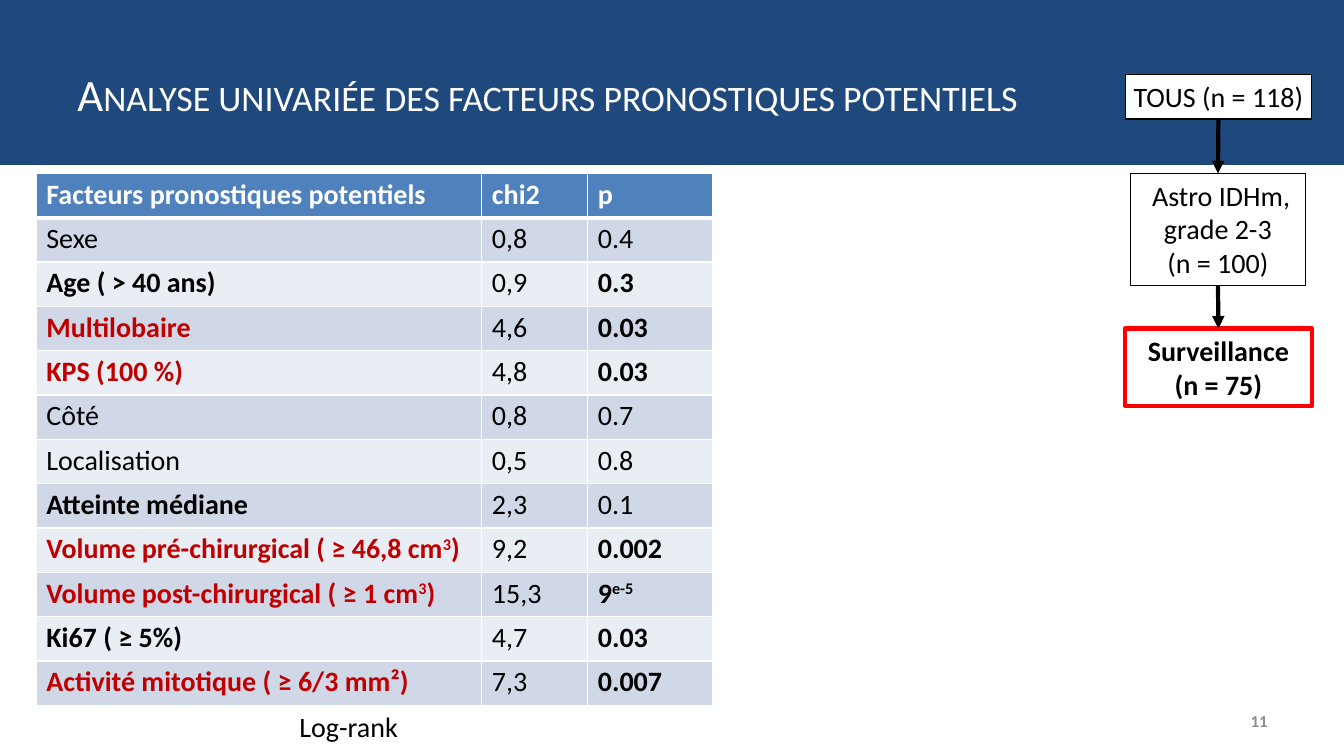
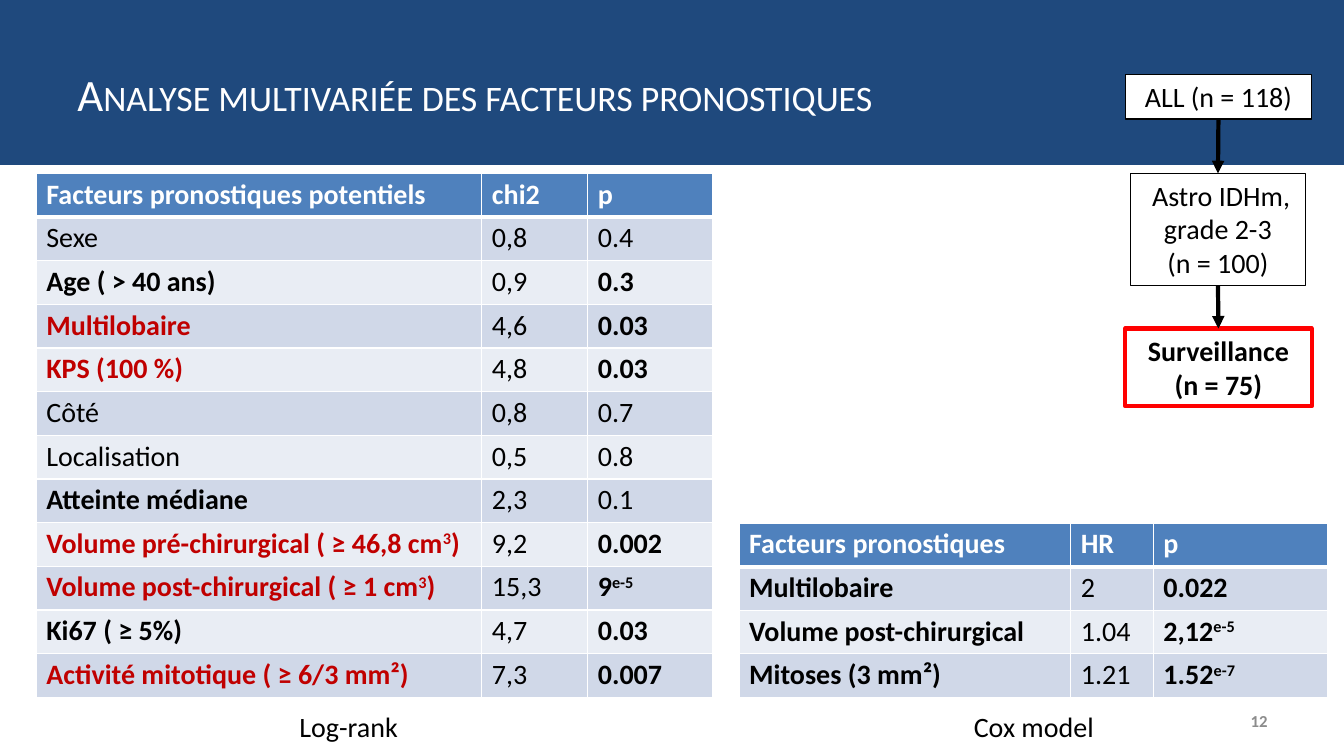
from pptx import Presentation
from pptx import util as u
from pptx.dml.color import RGBColor
from pptx.enum import shapes, text
from pptx.oxml.ns import qn
from lxml import etree

COLORS = {
    "navy": "1F497D", "header": "4F81BD", "band_dark": "D0D8E8", "band_light": "E9EDF4",
    "white": "FFFFFF", "black": "000000", "gray": "8C8C8C", "dark_red": "C00000", "red": "FF0000",
}
RGB = {name: RGBColor.from_string(value) for name, value in COLORS.items()}
STYLES = {"n": ("black", False), "b": ("black", True), "r": ("dark_red", True), "h": ("white", True)}

UNIVARIATE = [
    ("Facteurs pronostiques potentiels", "chi2", "p", "hhh"),
    ("Sexe", "0,8", "0.4", "nnn"),
    ("Age ( > 40 ans)", "0,9", "0.3", "bnb"),
    ("Multilobaire", "4,6", "0.03", "rnb"),
    ("KPS (100 %)", "4,8", "0.03", "rnb"),
    ("Côté", "0,8", "0.7", "nnn"),
    ("Localisation", "0,5", "0.8", "nnn"),
    ("Atteinte médiane", "2,3", "0.1", "bnn"),
    ("Volume pré-chirurgical ( ≥ 46,8 cm^3^)", "9,2", "0.002", "rnb"),
    ("Volume post-chirurgical ( ≥ 1 cm^3^)", "15,3", "9^e-5", "rnb"),
    ("Ki67 ( ≥ 5%)", "4,7", "0.03", "bnb"),
    ("Activité mitotique ( ≥ 6/3 mm²)", "7,3", "0.007", "rnb"),
]
MULTIVARIATE = [
    ("Facteurs pronostiques", "HR", "p", "hhh"),
    ("Multilobaire", "2", "0.022", "bnb"),
    ("Volume post-chirurgical", "1.04", "2,12^e-5", "bnb"),
    ("Mitoses (3 mm²)", "1.21", "1.52^e-7", "bnb"),
]
UNIVARIATE_COLUMNS = (4.42, 1.05, 1.24)
PAGES = [
    {
        "title": "Analyse univariée des facteurs pronostiques potentiels",
        "number": "11",
        "cohort": "TOUS (n = 118)",
        "captions": [("Log-rank", 2.87)],
        "tables": [(UNIVARIATE, 0.36, 1.72, UNIVARIATE_COLUMNS, 5.28)],
    },
    {
        "title": "Analyse multivariée des facteurs pronostiques",
        "number": "12",
        "cohort": "ALL (n = 118)",
        "captions": [("Log-rank", 2.87), ("Cox model", 9.56)],
        "tables": [
            (UNIVARIATE, 0.36, 1.72, UNIVARIATE_COLUMNS, 5.2),
            (MULTIVARIATE, 7.33, 5.19, (3.29, 0.82, 1.73), 1.73),
        ],
    },
]


def write(frame, content, size=20, color="black", bold=False, align=None,
          anchor=text.MSO_ANCHOR.TOP, small_caps=False):
    frame.word_wrap = True
    frame.vertical_anchor = anchor
    for index, line in enumerate(content.split("\n")):
        para = frame.add_paragraph() if index else frame.paragraphs[0]
        para.alignment = align
        for part, words in enumerate(line.split("^")):
            span = para.add_run()
            span.text = words
            span.font.name = "Calibri"
            span.font.size = u.Pt(size)
            span.font.bold = bold
            span.font.color.rgb = RGB[color]
            if part % 2:
                span.font._element.set("baseline", "30000")
            if small_caps:
                span.font._element.set("cap", "small")


def add_box(page, left, top, width, height, fill, line, weight):
    box = page.shapes.add_shape(shapes.MSO_SHAPE.RECTANGLE, u.Inches(left), u.Inches(top),
                                u.Inches(width), u.Inches(height))
    box.shadow.inherit = False
    if fill:
        box.fill.solid()
        box.fill.fore_color.rgb = RGB[fill]
    else:
        box.fill.background()
    box.line.color.rgb = RGB[line]
    box.line.width = u.Pt(weight)
    frame = box.text_frame
    frame.margin_left = frame.margin_right = frame.margin_top = frame.margin_bottom = u.Inches(0.05)
    return box


deck = Presentation()
deck.slide_width = u.Inches(13.33)
deck.slide_height = u.Inches(7.5)

for content in PAGES:
    page = deck.slides.add_slide(deck.slide_layouts[6])
    add_box(page, 0, 0, 13.33, 1.62, "navy", "navy", 2)

    labels = [
        (content["title"], (0.67, 0.3, 12, 1.25),
         dict(size=32, color="white", anchor=text.MSO_ANCHOR.MIDDLE, small_caps=True)),
        (content["number"], (9.56, 6.95, 3.11, 0.4),
         dict(size=12, color="gray", bold=True, align=text.PP_ALIGN.RIGHT,
              anchor=text.MSO_ANCHOR.MIDDLE)),
    ]
    labels += [(caption, (left, 6.99, 1.75, 0.44), {}) for caption, left in content["captions"]]
    for words, place, look in labels:
        label = page.shapes.add_textbox(*map(u.Inches, place))
        write(label.text_frame, words, **look)

    for rows, left, top, columns, height in content["tables"]:
        table = page.shapes.add_table(len(rows), len(columns), u.Inches(left), u.Inches(top),
                                      u.Inches(sum(columns)), u.Inches(height)).table
        table.horz_banding = False
        for column, width in zip(table.columns, columns):
            column.width = u.Inches(width)
        for r, (*values, styles) in enumerate(rows):
            table.rows[r].height = u.Inches(height / len(rows))
            fill = ("band_dark" if r % 2 else "band_light") if r else "header"
            for c, (value, style) in enumerate(zip(values, styles)):
                cell = table.cell(r, c)
                cell.margin_top = cell.margin_bottom = u.Inches(0.04)
                color, bold = STYLES[style]
                write(cell.text_frame, value, color=color, bold=bold)
                borders = {"L": 1, "R": 1, "T": 3 if r == 1 else 1, "B": 1 if r else 3}
                for side, weight in borders.items():
                    border = etree.SubElement(cell._tc.get_or_add_tcPr(), qn(f"a:ln{side}"),
                                              w=str(u.Pt(weight)))
                    paint = etree.SubElement(border, qn("a:solidFill"))
                    etree.SubElement(paint, qn("a:srgbClr"), val=COLORS["white"])
                cell.fill.solid()
                cell.fill.fore_color.rgb = RGB[fill]

    flow = [
        (content["cohort"], (11.16, 0.74, 1.85, 0.44), "white", "black", 1, False),
        (" Astro IDHm, grade 2-3\n(n = 100)", (11.21, 1.72, 1.74, 1.11), "white", "black", 1, False),
        ("Surveillance\n(n = 75)", (11.16, 3.26, 1.85, 0.77), None, "red", 3, True),
    ]
    previous = None
    for words, place, fill, line, weight, bold in flow:
        step = add_box(page, *place, fill, line, weight)
        write(step.text_frame, words, bold=bold, align=text.PP_ALIGN.CENTER)
        if previous:
            arrow = page.shapes.add_connector(shapes.MSO_CONNECTOR.STRAIGHT, 0, 0, 0, 0)
            arrow.begin_connect(previous, 2)
            arrow.end_connect(step, 0)
            arrow.line.color.rgb = RGB["black"]
            arrow.line.width = u.Pt(3)
            etree.SubElement(arrow.line._get_or_add_ln(), qn("a:tailEnd"), type="triangle")
            etree.SubElement(arrow._element.spPr, qn("a:effectLst"))
        previous = step

deck.save("out.pptx")
